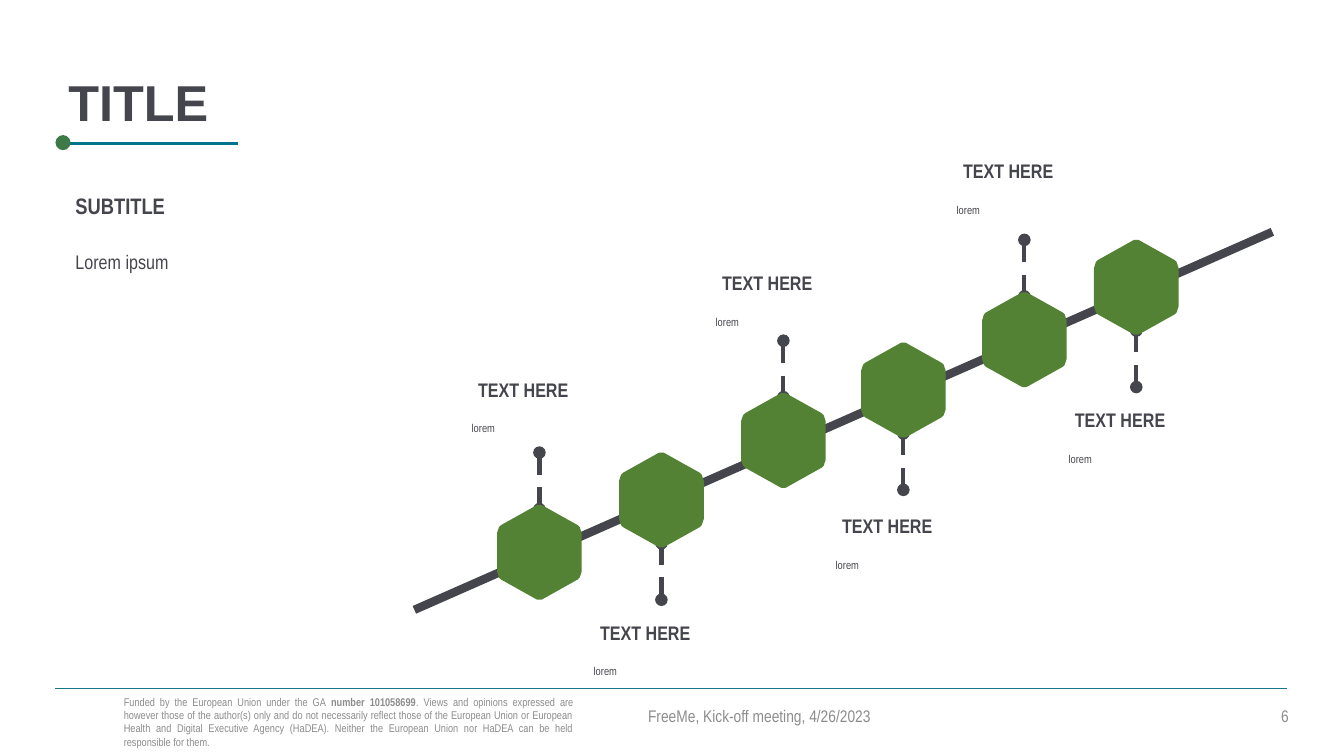
from pptx import Presentation
from pptx.dml.color import RGBColor
from pptx.enum.dml import MSO_LINE
from pptx.enum.shapes import MSO_CONNECTOR, MSO_SHAPE
from pptx.enum.text import MSO_ANCHOR as ANCHOR, PP_ALIGN as ALIGN
from pptx.oxml.ns import qn
from pptx.util import Inches, Pt
from lxml import etree

DARK = RGBColor(0x45, 0x45, 0x4D)
GRAY = RGBColor(0x8C, 0x8C, 0x8C)
TEAL = RGBColor(0x00, 0x74, 0x8B)
FOOTER_TEAL = RGBColor(0x17, 0x75, 0x8C)
DOT_GREEN = RGBColor(0x3E, 0x7A, 0x47)
HEX_GREEN = RGBColor(0x54, 0x82, 0x35)


def add_text(box, runs, size, color=DARK, font="Arial Narrow", align=ALIGN.LEFT,
             anchor=ANCHOR.TOP, wrap=True):
    tb = s.shapes.add_textbox(*map(Inches, box))
    tf = tb.text_frame
    tf.word_wrap = wrap
    tf.vertical_anchor = anchor
    p = tf.paragraphs[0]
    p.alignment = align
    for text, bold in runs:
        r = p.add_run()
        r.text = text
        fmt = {"name": font, "size": Pt(size), "bold": bold}
        for key, value in fmt.items():
            setattr(r.font, key, value)
        r.font.color.rgb = color
    return p


def add_line(x1, y1, x2, y2, color, width):
    c = s.shapes.add_connector(MSO_CONNECTOR.STRAIGHT, *map(Inches, (x1, y1, x2, y2)))
    c.line.color.rgb = color
    c.line.width = Pt(width)
    etree.SubElement(c._element.spPr, qn("a:effectLst"))
    return c


prs = Presentation()
prs.slide_width, prs.slide_height = Inches(13.33), Inches(7.5)
s = prs.slides.add_slide(prs.slide_layouts[6])

add_text((6.33, 6.9, 3, 0.4), [("FreeMe, Kick-off meeting, 4/26/2023", False)], 12,
         GRAY, anchor=ANCHOR.MIDDLE)
add_text((1.13, 6.87, 4.66, 0.58), [
    ("Funded by the European Union under the GA ", False),
    ("number 101058699", True),
    (". Views and opinions expressed are however those of the author(s) only and do not "
     "necessarily reflect those of the European Union or European Health and Digital "
     "Executive Agency (HaDEA). Neither the European Union nor HaDEA can be held "
     "responsible for them.", False),
], 8, GRAY, align=ALIGN.JUSTIFY, anchor=ANCHOR.MIDDLE)
add_text((9.88, 6.9, 3, 0.4), [("6", False)], 12, GRAY, align=ALIGN.RIGHT,
         anchor=ANCHOR.MIDDLE)
add_line(0.55, 6.83, 12.76, 6.83, FOOTER_TEAL, 0.5)

add_line(0.57, 1.42, 2.36, 1.42, TEAL, 2.25)
dot = s.shapes.add_shape(MSO_SHAPE.OVAL, *map(Inches, (0.55, 1.34, 0.15, 0.15)))
dot.shadow.inherit = False
dot.fill.solid()
dot.fill.fore_color.rgb = DOT_GREEN
dot.line.fill.background()

add_text((0.58, 0.66, 9.2, 0.71), [("TITLE", True)], 36, font="Arial")
subtitle = add_text((0.65, 1.69, 2.39, 0.74), [("SUBTITLE", True)], 16,
                    anchor=ANCHOR.MIDDLE)
subtitle.line_spacing = 0.9
add_text((0.65, 2.43, 1.84, 0.34), [("Lorem ipsum", False)], 14)

add_line(4.11, 6.05, 12.62, 2.3, DARK, 6)

corner = [(0, 0.47), (0.02, 0.47), (0.04, 0.46), (0.38, 0.27), (0.4, 0.25),
          (0.41, 0.22), (0.42, 0.19)]
right = [(x, -y) for x, y in corner] + corner[::-1]
hexagon = right + [(-x, y) for x, y in right[::-1]]

milestones = [
    (5.35, 5.48, 3.7), (6.56, 4.96, 6.11), (7.77, 4.37, 2.64),
    (8.96, 3.87, 5.05), (10.16, 3.37, 1.53), (11.27, 2.85, 4.0),
]
for i, (cx, cy, label_y) in enumerate(milestones):
    side = 1 if i % 2 else -1
    stem = add_line(cx, cy + side * 0.99, cx, cy + side * 0.43, DARK, 3)
    stem.line.dash_style = MSO_LINE.DASH
    for end in ("a:headEnd", "a:tailEnd"):
        etree.SubElement(stem.line._get_or_add_ln(), qn(end), type="oval")

    points = [(Inches(cx + x), Inches(cy + y)) for x, y in hexagon]
    fb = s.shapes.build_freeform(*points[0])
    fb.add_line_segments(points[1:], close=True)
    sp = fb.convert_to_shape()
    sp.shadow.inherit = False
    sp.fill.solid()
    sp.fill.fore_color.rgb = HEX_GREEN
    sp.line.fill.background()

    add_text((cx - 0.71, label_y, 1.1, 0.34), [("TEXT HERE", True)], 14,
             align=ALIGN.CENTER, wrap=False)
    p = add_text((cx - 0.77, label_y + 0.41, 1.54, 0.26), [("lorem", False)], 14,
                 align=ALIGN.JUSTIFY)
    p.runs[0]._r.get_or_add_rPr().set("baseline", "30000")

prs.save("out.pptx")
